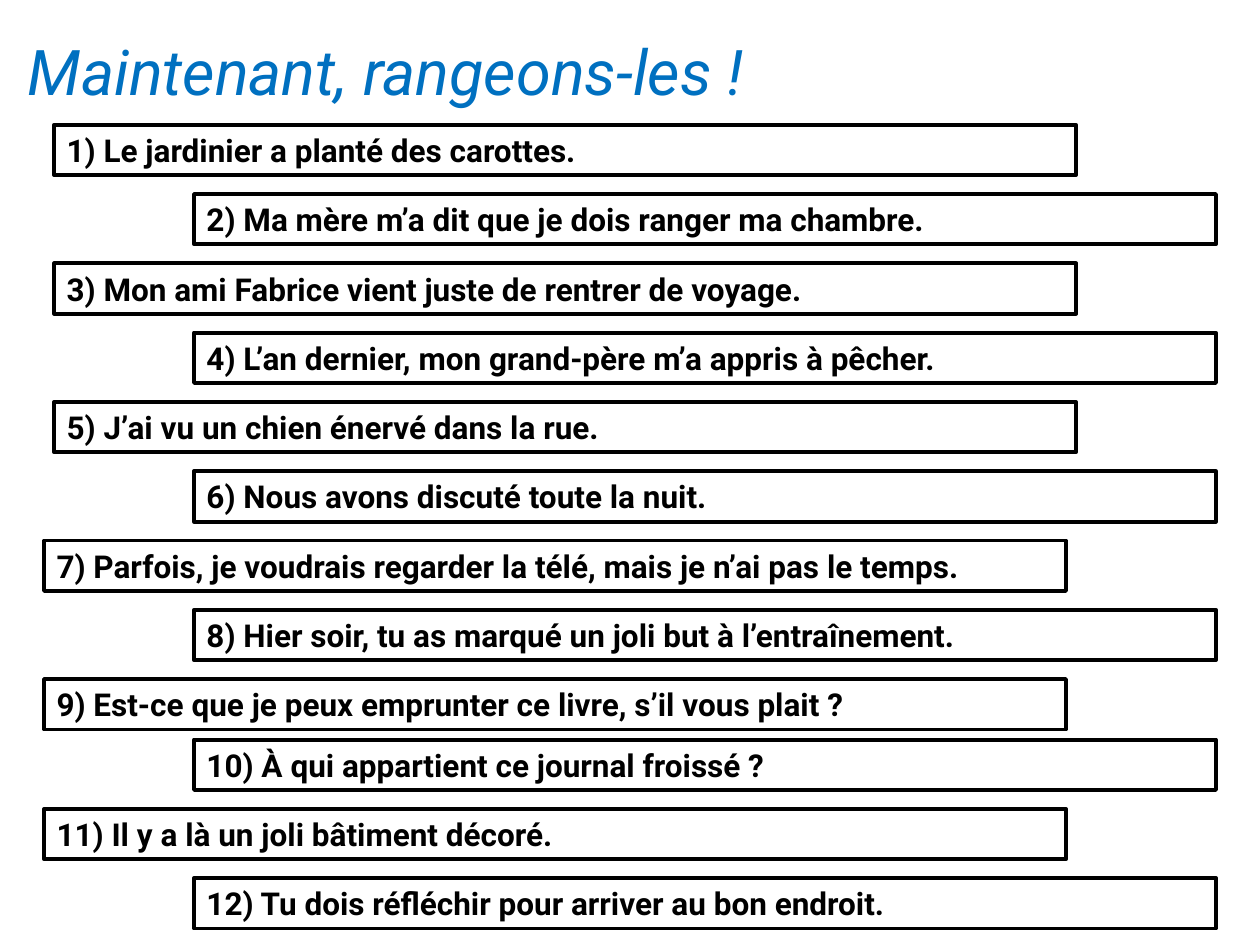
from pptx import Presentation
from pptx.dml.color import RGBColor
from pptx.enum.shapes import MSO_SHAPE
from pptx.enum.text import MSO_ANCHOR, MSO_AUTO_SIZE, PP_ALIGN
from pptx.util import Inches, Pt

COLORS = {"title": "0070C0", "ink": "000000"}
FONT = "Roboto"
SENTENCES = [
    "Le jardinier a planté des carottes.",
    "Ma mère m’a dit que je dois ranger ma chambre.",
    "Mon ami Fabrice vient juste de rentrer de voyage.",
    "L’an dernier, mon grand-père m’a appris à pêcher.",
    "J’ai vu un chien énervé dans la rue.",
    "Nous avons discuté toute la nuit.",
    "Parfois, je voudrais regarder la télé, mais je n’ai pas le temps.",
    "Hier soir, tu as marqué un joli but à l’entraînement.",
    "Est-ce que je peux emprunter ce livre, s’il vous plait ?",
    "À qui appartient ce journal froissé ?",
    "Il y a là un joli bâtiment décoré.",
    "Tu dois réfléchir pour arriver au bon endroit.",
]


def place(sp, left, top, width, height):
    sp.left, sp.top = Inches(left), Inches(top)
    sp.width, sp.height = Inches(width), Inches(height)


def write(sp, text, size, color, bold=False, italic=False):
    tf = sp.text_frame
    tf.text = text
    tf.word_wrap = True
    tf.auto_size = MSO_AUTO_SIZE.SHAPE_TO_FIT_TEXT
    tf.vertical_anchor = MSO_ANCHOR.TOP
    p = tf.paragraphs[0]
    p.alignment = PP_ALIGN.LEFT
    font = p.runs[0].font
    font.name, font.size = FONT, Pt(size)
    font.bold, font.italic = bold, italic
    font.color.rgb = RGBColor.from_string(COLORS[color])


def add_title(slide, box):
    sp = slide.shapes.title
    place(sp, *box)
    write(sp, "Maintenant, rangeons-les !", 36, "title", italic=True)


def add_sentence(slide, text, box):
    sp = slide.shapes.add_shape(MSO_SHAPE.RECTANGLE, *map(Inches, box))
    sp.shadow.inherit = False
    sp.fill.background()
    sp.line.color.rgb = RGBColor.from_string(COLORS["ink"])
    sp.line.width = Pt(2.25)
    write(sp, text, 18, "ink", bold=True)


def add_sentences(slide, box):
    """Staggered rows: odd numbers to the left, even ones to the right."""
    left, top, width, height = box
    pitch, bar_width, bar_height = height / len(SENTENCES), 8.11, 0.4
    for i, sentence in enumerate(SENTENCES):
        if i % 2:
            x = left + width - bar_width
        else:
            x = left + (0.08 if i < 6 else 0)  # the lower rows start further left
        y = top + i * pitch - (0.07 if i >= 9 else 0)  # the last rows sit closer
        add_sentence(slide, f"{i + 1}) {sentence}", (x, y, bar_width, bar_height))


def main():
    prs = Presentation()
    prs.slide_width, prs.slide_height = Inches(10), Inches(7.5)
    slide = prs.slides.add_slide(prs.slide_layouts[5])  # title only
    add_title(slide, (0.12, 0.21, 9.67, 0.71))
    add_sentences(slide, (0.35, 0.99, 9.3, 6.6))
    prs.save("out.pptx")


if __name__ == "__main__":
    main()
